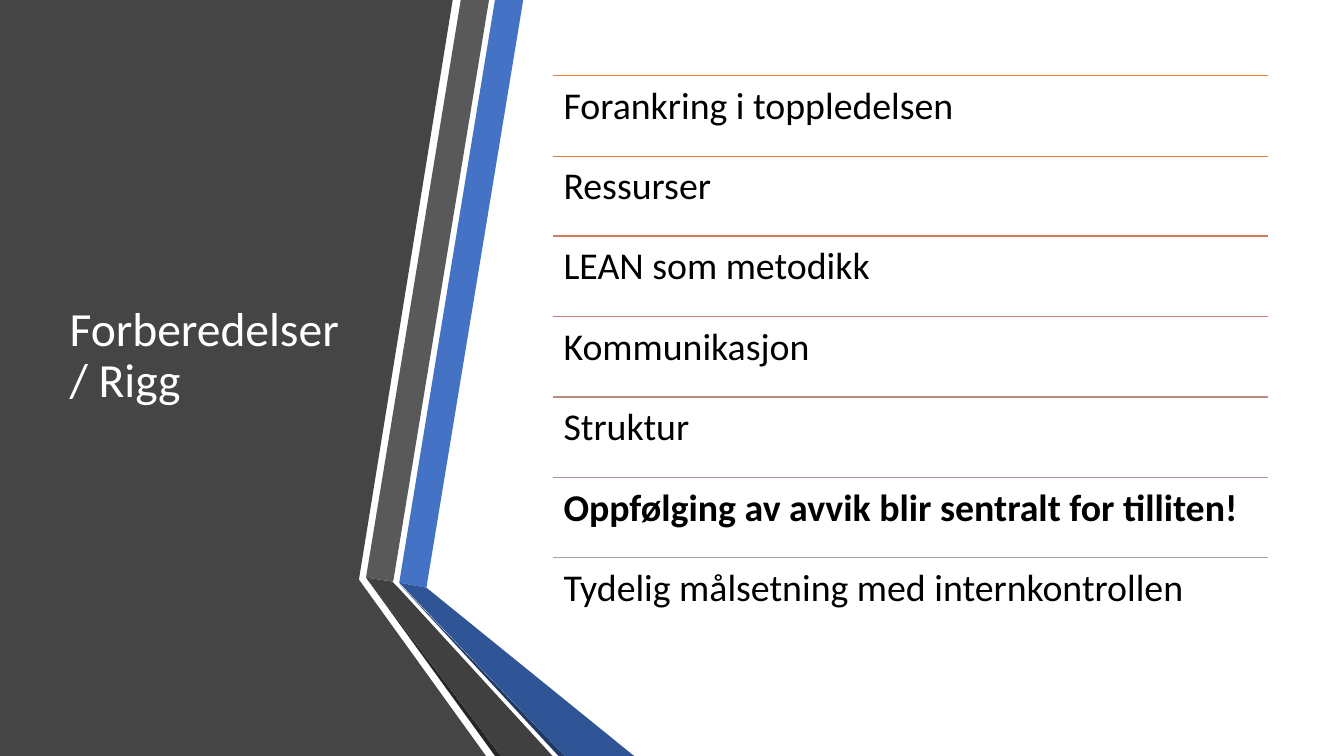
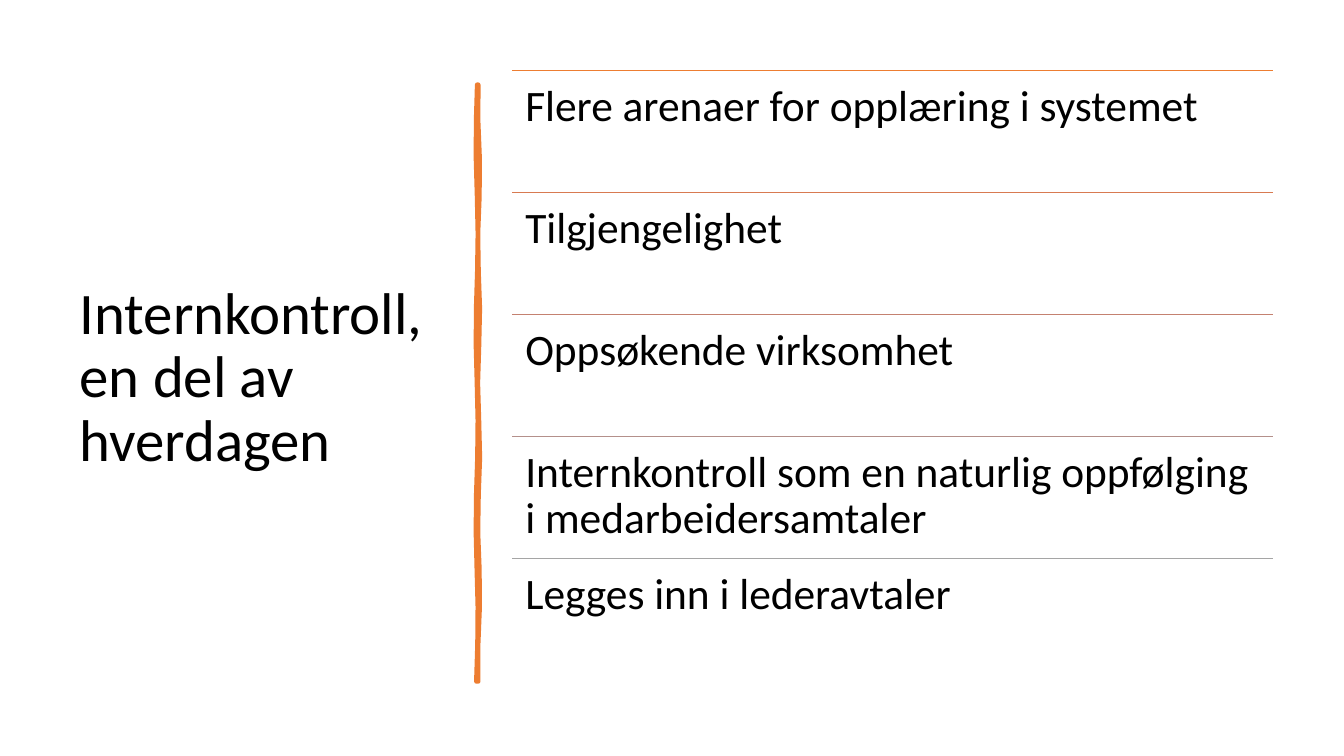
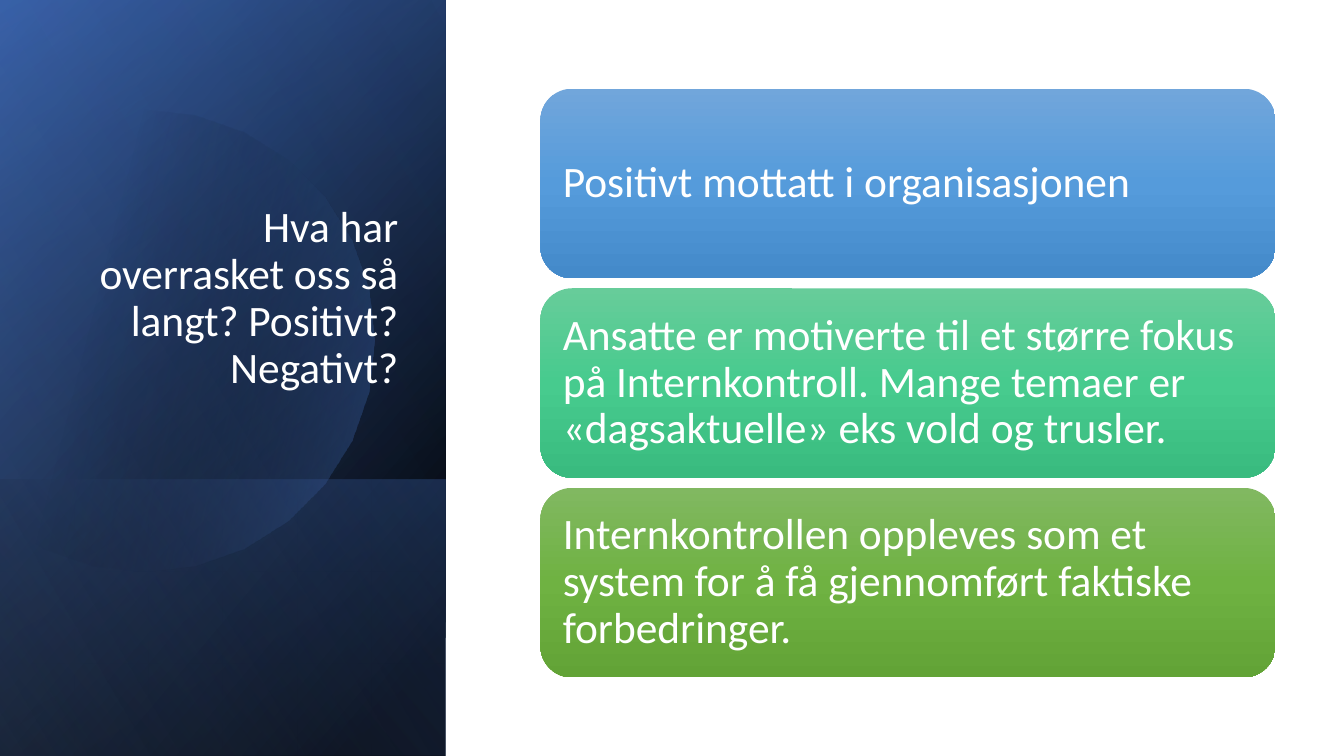
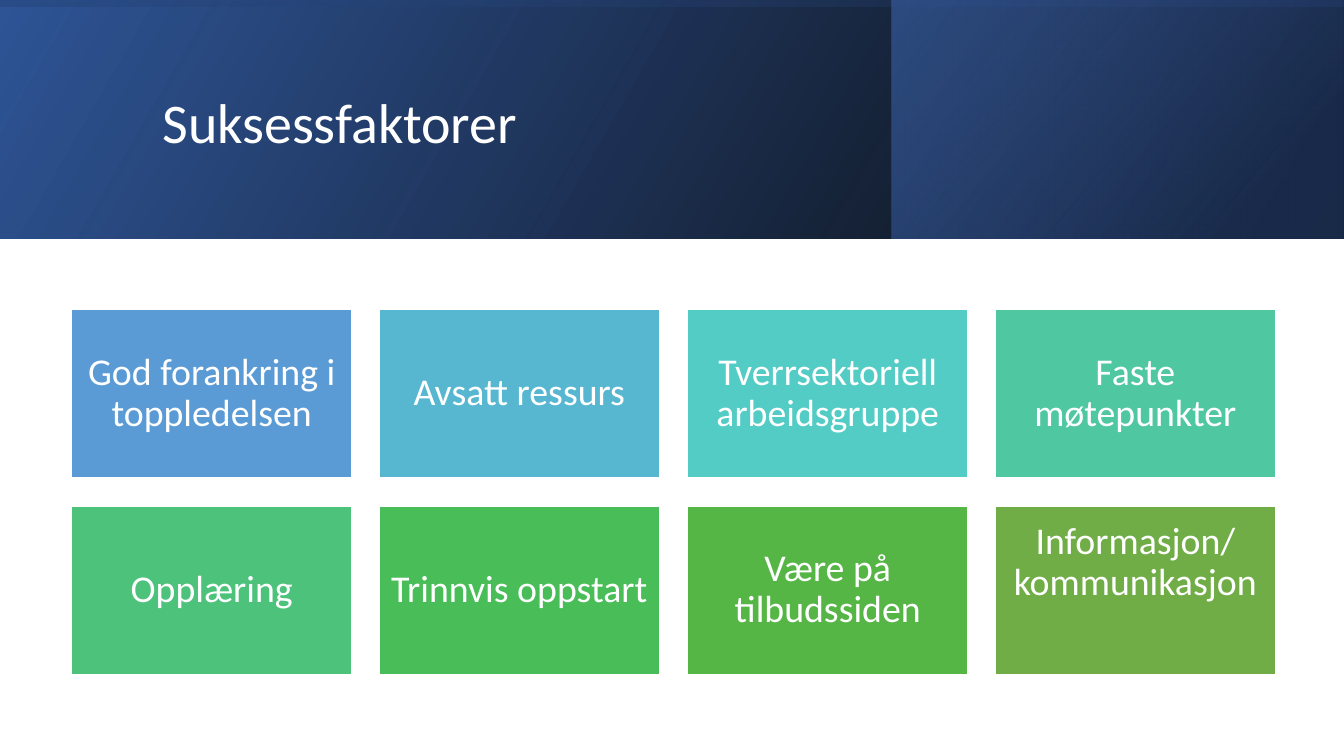
from dataclasses import dataclass
from math import acos, cos, sin
from typing import NamedTuple, Optional, Sequence

from lxml import etree
from pptx import Presentation
from pptx.dml.color import RGBColor
from pptx.enum.shapes import MSO_CONNECTOR, MSO_SHAPE
from pptx.enum.text import MSO_ANCHOR, MSO_AUTO_SIZE, PP_ALIGN
from pptx.oxml.ns import qn
from pptx.shapes.autoshape import Shape
from pptx.slide import Slide
from pptx.text.text import TextFrame
from pptx.util import Emu, Pt

PX = 9144
SLIDE_WIDTH, SLIDE_HEIGHT = 1333, 750
TITLE_ONLY = 5
RECTANGLE, ROUNDED = MSO_SHAPE.RECTANGLE, MSO_SHAPE.ROUNDED_RECTANGLE
STRAIGHT = MSO_CONNECTOR.STRAIGHT
TOP, MIDDLE, BOTTOM = MSO_ANCHOR.TOP, MSO_ANCHOR.MIDDLE, MSO_ANCHOR.BOTTOM
LEFT, CENTER, RIGHT = PP_ALIGN.LEFT, PP_ALIGN.CENTER, PP_ALIGN.RIGHT


@dataclass(frozen=True)
class Theme:
    font: str = "Calibri"
    white: str = "FFFFFF"
    black: str = "000000"
    blue: str = "4472C4"
    deep_blue: str = "2F5597"
    navy: str = "203864"
    pale_blue: str = "8FAADC"
    orange: str = "ED7D31"
    grey: str = "A5A5A5"
    panel: str = "454545"
    small: int = 27
    medium: int = 31
    narrow_title: int = 34
    band_title: int = 40
    large_title: int = 42
    line_spacing: float = 0.9
    rule_width: float = 1
    brush_width: float = 3.25


THEME = Theme()


class Box(NamedTuple):
    left: int
    top: int
    width: int
    height: int


class Point(NamedTuple):
    x: float
    y: float


class Stop(NamedTuple):
    position: int
    color: str
    opacity: int = 100


class TextStyle(NamedTuple):
    size: int
    color: str
    align: PP_ALIGN = LEFT
    anchor: MSO_ANCHOR = MIDDLE
    bold: bool = False


@dataclass(frozen=True)
class Gradient:
    angle: int
    stops: Sequence[Stop]


@dataclass(frozen=True)
class Panel:
    box: Box
    gradient: Gradient
    rotation: int = 0


@dataclass(frozen=True)
class Facet:
    color: str
    points: Sequence[tuple[int, int]]


@dataclass(frozen=True)
class Row:
    text: str
    color: str
    bold: bool = False


@dataclass(frozen=True)
class Card:
    text: str
    stops: Sequence[Stop]


@dataclass(frozen=True)
class Tile:
    text: str
    color: str
    extra_bottom: int = 0


FACETS = (
    Facet(THEME.panel, ((0, 0), (449, 0), (356, 575), (482, 750), (0, 750))),
    Facet(THEME.blue, ((396, 578), (423, 583), (519, 0), (491, 0))),
    Facet("595959", ((485, 0), (457, 0), (363, 573), (390, 577))),
    Facet("262626", ((363, 573), (491, 750), (497, 750))),
    Facet(THEME.navy, ((396, 579), (554, 750), (560, 750))),
    Facet(THEME.deep_blue, ((396, 578), (560, 750), (629, 750), (423, 583))),
    Facet("404040", ((363, 573), (497, 750), (548, 750), (395, 583), (389, 577))),
)

PREPARATION_ROWS = (
    Row("Forankring i toppledelsen", THEME.orange),
    Row("Ressurser", "DE7A47"),
    Row("LEAN som metodikk", "D17B5C"),
    Row("Kommunikasjon", "C48170"),
    Row("Struktur", "B98A82"),
    Row("Oppfølging av avvik blir sentralt for tilliten!", "AE9694", bold=True),
    Row("Tydelig målsetning med internkontrollen", THEME.grey),
)

EVERYDAY_ROWS = (
    Row("Flere arenaer for opplæring i systemet", THEME.orange),
    Row("Tilgjengelighet", "D87A51"),
    Row("Oppsøkende virksomhet", "C48170"),
    Row("Internkontroll som en naturlig oppfølging i medarbeidersamtaler", "B4908B"),
    Row("Legges inn i lederavtaler", THEME.grey),
)

SIDE_BOX = Box(-154, 154, 750, 442)
SIDE_PANELS = (
    Panel(SIDE_BOX, Gradient(50, (Stop(8, THEME.black), Stop(100, THEME.deep_blue))), 90),
    Panel(SIDE_BOX, Gradient(30, (Stop(0, THEME.black, 0), Stop(99, THEME.blue, 46))), 90),
    Panel(Box(84, 392, 274, 442),
          Gradient(130, (Stop(2, THEME.blue, 29), Stop(100, THEME.black, 30))), 90),
)
SIDE_GLOSS = Panel(
    SIDE_BOX, Gradient(120, (Stop(0, THEME.black, 0), Stop(99, THEME.pale_blue, 11))), 90)
DISC_GRADIENT = Gradient(14, (Stop(29, THEME.black, 0), Stop(100, THEME.blue, 43)))

BAND_PANELS = (
    Panel(Box(0, 0, 1333, 237),
          Gradient(330, (Stop(0, THEME.black, 96), Stop(100, THEME.deep_blue)))),
    Panel(Box(884, 0, 448, 237),
          Gradient(320, (Stop(19, THEME.navy, 68), Stop(100, THEME.blue, 48)))),
    Panel(Box(548, -548, 237, 1333),
          Gradient(350, (Stop(23, THEME.deep_blue, 16), Stop(99, THEME.black, 45))), 270),
)

CARDS = (
    Card("Positivt mottatt i organisasjonen",
         (Stop(0, "71A6DB"), Stop(50, "559BDB"), Stop(100, "448ACA"))),
    Card("Ansatte er motiverte til et større fokus på Internkontroll. "
         "Mange temaer er «dagsaktuelle» eks vold og trusler.",
         (Stop(0, "67CC9A"), Stop(50, "47CB8E"), Stop(100, "39BB7F"))),
    Card("Internkontrollen oppleves som et system for å få gjennomført "
         "faktiske forbedringer.",
         (Stop(0, "81B861"), Stop(50, "6FB242"), Stop(100, "62A336"))),
)

TILES = (
    Tile("God forankring i toppledelsen", "5B9BD5"),
    Tile("Avsatt ressurs", "57B7D1"),
    Tile("Tverrsektoriell arbeidsgruppe", "53CCC5"),
    Tile("Faste møtepunkter", "4FC7A0"),
    Tile("Opplæring", "4CC27B"),
    Tile("Trinnvis oppstart", "48BD58"),
    Tile("Være på tilbudssiden", "55B646"),
    Tile("Informasjon/ kommunikasjon", "70AD47", extra_bottom=54),
)


def px(length: float) -> Emu:
    return Emu(round(length * PX))


def emu_box(box: Box) -> list[Emu]:
    return [px(length) for length in box]


def rgb(color: str) -> RGBColor:
    return RGBColor.from_string(color)


def write_text(frame: TextFrame, text: str, style: TextStyle,
               margin: Optional[int] = None, extra_bottom: int = 0) -> None:
    frame.text = text
    frame.word_wrap = True
    frame.auto_size = MSO_AUTO_SIZE.NONE
    frame.vertical_anchor = style.anchor
    if margin is not None:
        frame.margin_left = frame.margin_right = frame.margin_top = px(margin)
        frame.margin_bottom = px(margin + extra_bottom)
    paragraph = frame.paragraphs[0]
    paragraph.alignment = style.align
    paragraph.line_spacing = THEME.line_spacing
    paragraph.font.name = THEME.font
    paragraph.font.size = Pt(style.size)
    paragraph.font.bold = style.bold
    paragraph.font.color.rgb = rgb(style.color)


def place_title(slide: Slide, text: str, box: Box, style: TextStyle) -> None:
    title = slide.shapes.title
    title.left, title.top, title.width, title.height = emu_box(box)
    write_text(title.text_frame, text, style)
    slide.shapes._spTree.append(title._element)


def fill_solid(shape: Shape, color: str) -> None:
    shape.fill.solid()
    shape.fill.fore_color.rgb = rgb(color)


def fill_gradient(shape: Shape, gradient: Gradient) -> None:
    shape.fill.gradient()
    element = shape._element.spPr.find(qn("a:gradFill"))
    stop_list = element.find(qn("a:gsLst"))
    for old_stop in list(stop_list):
        stop_list.remove(old_stop)
    for stop in gradient.stops:
        entry = etree.SubElement(stop_list, qn("a:gs"), pos=str(stop.position * 1000))
        color = etree.SubElement(entry, qn("a:srgbClr"), val=stop.color)
        if stop.opacity < 100:
            etree.SubElement(color, qn("a:alpha"), val=str(stop.opacity * 1000))
    element.find(qn("a:lin")).set("ang", str(gradient.angle * 60000))


def add_plain_shape(slide: Slide, kind: MSO_SHAPE, box: Box) -> Shape:
    shape = slide.shapes.add_shape(kind, *emu_box(box))
    shape.shadow.inherit = False
    shape.line.fill.background()
    return shape


def add_panel(slide: Slide, panel: Panel) -> None:
    shape = add_plain_shape(slide, RECTANGLE, panel.box)
    shape.rotation = panel.rotation
    shape._element.spPr.find(qn("a:xfrm")).set("flipH", "1")
    fill_gradient(shape, panel.gradient)


def add_outline(slide: Slide, points: Sequence[tuple[float, float]]) -> Shape:
    start, *others = [(px(x), px(y)) for x, y in points]
    builder = slide.shapes.build_freeform(*start)
    builder.add_line_segments(others, close=True)
    shape = builder.convert_to_shape()
    shape.shadow.inherit = False
    shape.line.fill.background()
    return shape


def add_rule(slide: Slide, left: int, right: int, top: int, color: str) -> None:
    rule = slide.shapes.add_connector(STRAIGHT, px(left), px(top), px(right), px(top))
    rule.line.color.rgb = rgb(color)
    rule.line.width = Pt(THEME.rule_width)
    etree.SubElement(rule._element.spPr, qn("a:effectLst"))


def add_rows(slide: Slide, rows: Sequence[Row], area: Box, size: int, margin: int) -> None:
    pitch = area.height / len(rows)
    for index, row in enumerate(rows):
        top = area.top + round(index * pitch)
        add_rule(slide, area.left, area.left + area.width, top, row.color)
        box = Box(area.left, top, area.width, round(pitch))
        label = slide.shapes.add_textbox(*emu_box(box))
        style = TextStyle(size, THEME.black, anchor=TOP, bold=row.bold)
        write_text(label.text_frame, row.text, style, margin)


def add_brush_stroke(slide: Slide) -> None:
    heights = range(84, 677, 37)
    right = [Point(475 + sin(y / 22), y) for y in heights]
    left = [Point(473 + sin(y / 30), y) for y in reversed(heights)]
    stroke = add_outline(slide, right + left)
    fill_solid(stroke, THEME.orange)
    stroke.line.color.rgb = rgb(THEME.orange)
    stroke.line.width = Pt(THEME.brush_width)


def add_disc(slide: Slide) -> None:
    center, radius, steps = Point(142, 338), 229, 20
    reach = acos(-center.x / radius)
    angles = [-reach + 2 * reach * step / steps for step in range(steps + 1)]
    disc = add_outline(slide, [Point(center.x + radius * cos(angle),
                                     center.y + radius * sin(angle))
                               for angle in angles])
    fill_gradient(disc, DISC_GRADIENT)


def build_preparation(slide: Slide) -> None:
    for facet in FACETS:
        fill_solid(add_outline(slide, facet.points), facet.color)
    place_title(slide, "Forberedelser/ Rigg", Box(59, 75, 304, 558),
                TextStyle(THEME.narrow_title, THEME.white))
    add_rows(slide, PREPARATION_ROWS, Box(548, 75, 710, 558), THEME.small, 11)


def build_everyday(slide: Slide) -> None:
    place_title(slide, "Internkontroll, en del av hverdagen", Box(69, 70, 374, 611),
                TextStyle(THEME.large_title, THEME.black))
    add_brush_stroke(slide)
    add_rows(slide, EVERYDAY_ROWS, Box(508, 70, 755, 605), THEME.medium, 13)


def build_surprises(slide: Slide) -> None:
    for panel in SIDE_PANELS:
        add_panel(slide, panel)
    add_disc(slide)
    add_panel(slide, SIDE_GLOSS)
    place_title(slide, "Hva har overrasket oss så langt? Positivt? Negativt?",
                Box(64, 184, 341, 211),
                TextStyle(THEME.medium, THEME.white, RIGHT, BOTTOM))
    height, gap = 188, 10
    for index, card in enumerate(CARDS):
        box = Box(536, 88 + index * (height + gap), 729, height)
        shape = add_plain_shape(slide, ROUNDED, box)
        fill_gradient(shape, Gradient(90, card.stops))
        write_text(shape.text_frame, card.text, TextStyle(THEME.medium, THEME.white), 13)


def build_success_factors(slide: Slide) -> None:
    for panel in BAND_PANELS:
        add_panel(slide, panel)
    place_title(slide, "Suksessfaktorer", Box(151, 38, 1063, 172),
                TextStyle(THEME.band_title, THEME.white))
    grid = Box(71, 307, 1194, 362)
    columns, rows, width, height = 4, 2, 278, 167
    column_pitch = (grid.width - width) / (columns - 1)
    row_pitch = (grid.height - height) / (rows - 1)
    style = TextStyle(THEME.small, THEME.white, CENTER)
    for index, tile in enumerate(TILES):
        row, column = divmod(index, columns)
        box = Box(grid.left + round(column * column_pitch),
                  grid.top + round(row * row_pitch), width, height)
        shape = add_plain_shape(slide, RECTANGLE, box)
        fill_solid(shape, tile.color)
        shape.line.color.rgb = rgb(THEME.white)
        shape.line.width = Pt(THEME.rule_width)
        write_text(shape.text_frame, tile.text, style, 11, tile.extra_bottom)


def main() -> None:
    presentation = Presentation()
    presentation.slide_width = px(SLIDE_WIDTH)
    presentation.slide_height = px(SLIDE_HEIGHT)
    layout = presentation.slide_layouts[TITLE_ONLY]
    for build in (build_preparation, build_everyday, build_surprises, build_success_factors):
        build(presentation.slides.add_slide(layout))
    presentation.save("out.pptx")


if __name__ == "__main__":
    main()
